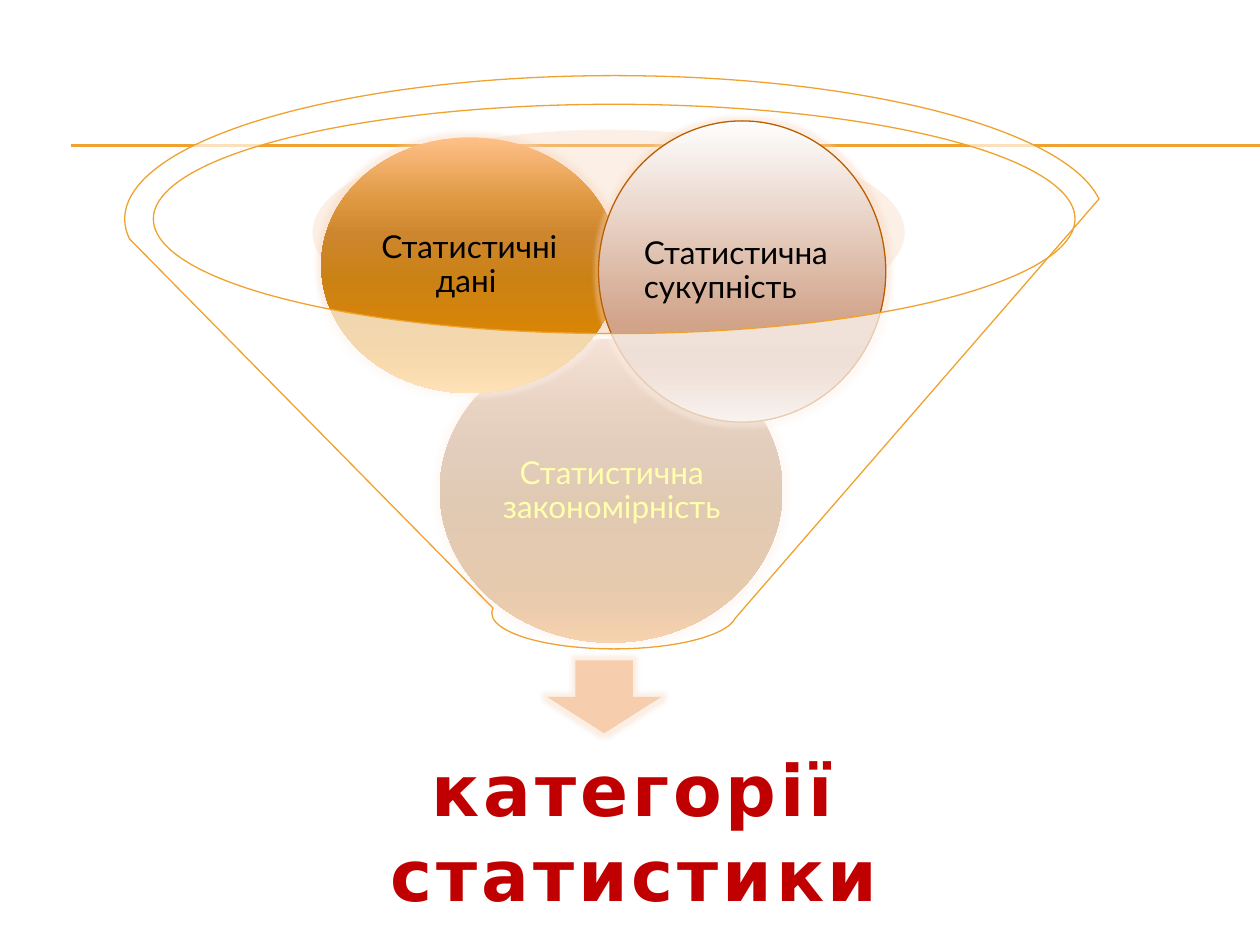
from lxml import etree
from pptx import Presentation
from pptx.dml.color import RGBColor
from pptx.enum.shapes import MSO_CONNECTOR, MSO_SHAPE
from pptx.enum.text import MSO_ANCHOR, PP_ALIGN
from pptx.oxml.ns import qn
from pptx.util import Inches, Pt

ELLIPSE, ARROW, FUNNEL = MSO_SHAPE.OVAL, MSO_SHAPE.DOWN_ARROW, MSO_SHAPE.FUNNEL
STRAIGHT = MSO_CONNECTOR.STRAIGHT
LEFT, CENTER = PP_ALIGN.LEFT, PP_ALIGN.CENTER
TOP, MIDDLE = MSO_ANCHOR.TOP, MSO_ANCHOR.MIDDLE

GOLD, PEACH, BLACK = "F0A22E", "F8D7BE", "000000"


def colour(value):
    return RGBColor.from_string(value)


def add_element(parent, tag, **attributes):
    element = etree.SubElement(parent, qn(tag))
    for name, value in attributes.items():
        element.set(name, str(value))
    return element


def add_colour(parent, value, opacity=100):
    element = add_element(parent, "a:srgbClr", val=value)
    if opacity < 100:
        add_element(element, "a:alpha", val=opacity * 1000)


class SlideBuilder:
    """Holds the slide style and draws each kind of element."""

    body_font = "Lato"
    title_font = "DejaVu Sans"
    line_width = Pt(0.75)

    def __init__(self, page):
        self.page = page

    def rule(self, left, right, top):
        line = self.page.shapes.add_connector(
            STRAIGHT, Inches(left), Inches(top), Inches(right), Inches(top))
        line.line.color.rgb = colour(GOLD)
        line.line.width = self.line_width
        add_element(line._element.spPr, "a:effectLst")

    def shape(self, kind, place, fill=None, opacity=100, stops=None,
              outline=None, glow=False):
        shape = self.page.shapes.add_shape(kind, *map(Inches, place))
        shape.shadow.inherit = False
        if stops:
            self.gradient(shape, stops)
        else:
            shape.fill.solid()
            shape.fill.fore_color.rgb = colour(fill)
            if opacity < 100:
                solid = shape._element.spPr.find(qn("a:solidFill"))
                add_element(solid[0], "a:alpha", val=opacity * 1000)
        if outline:
            shape.line.color.rgb = colour(outline)
            shape.line.width = self.line_width
        else:
            shape.line.fill.background()
        if glow:
            effects = shape._element.spPr.find(qn("a:effectLst"))
            halo = add_element(effects, "a:glow", rad=Pt(5))
            add_colour(halo, PEACH, 40)

    def gradient(self, shape, stops):
        shape.fill.gradient()
        fill = shape._element.spPr.find(qn("a:gradFill"))
        for child in list(fill):
            fill.remove(child)
        stop_list = add_element(fill, "a:gsLst")
        for position, value in stops:
            add_colour(add_element(stop_list, "a:gs", pos=position * 1000), value)
        add_element(fill, "a:lin", ang=90 * 60000, scaled=0)

    def text(self, place, spans, align, anchor, insets, wrap=True, spacing=1.0):
        box = self.page.shapes.add_textbox(*map(Inches, place))
        frame = box.text_frame
        side, end = map(Inches, insets)
        frame_format = {
            "margin_left": side, "margin_right": side,
            "margin_top": end, "margin_bottom": end,
            "vertical_anchor": anchor, "word_wrap": wrap,
        }
        for name, value in frame_format.items():
            setattr(frame, name, value)
        para = frame.paragraphs[0]
        para.alignment, para.line_spacing = align, spacing
        for index, (words, font_format, value) in enumerate(spans):
            if index and wrap is False:
                para.add_line_break()
            span = para.add_run()
            span.text = words
            for name, setting in font_format.items():
                setattr(span.font, name, setting)
            span.font.color.rgb = colour(value)
        return para

    def label(self, place, words, value, align=CENTER, tail=""):
        body = {"name": self.body_font, "size": Pt(18)}
        spans = [(words, body, value)]
        if tail:
            spans.append((tail, {**body, "size": Pt(14)}, value))
        self.text(place, spans, align, MIDDLE, (0.03, 0.03), spacing=0.9)

    def title(self, place, lines):
        heading = {"name": self.title_font, "size": Pt(40.5), "bold": True}
        spans = [(line, heading, "C00000") for line in lines]
        para = self.text(place, spans, CENTER, TOP, (0.07, 0.04), wrap=False)
        for span in para.runs:
            properties = span.font._element
            properties.set("spc", "220")
            outline = etree.Element(qn("a:ln"), w=str(Pt(0.9)))
            add_colour(add_element(outline, "a:solidFill"), "FEF8F4")
            properties.insert(0, outline)


def main():
    deck = Presentation()
    deck.slide_width, deck.slide_height = Inches(10), Inches(7.5)
    builder = SlideBuilder(deck.slides.add_slide(deck.slide_layouts[6]))

    # Double rule behind the funnel
    for top in (1.15, 1.16):
        builder.rule(0.56, 10, top)

    # Funnel mouth and outlet arrow
    builder.shape(ELLIPSE, (2.48, 1.03, 4.7, 1.63), PEACH, opacity=40)
    builder.shape(ARROW, (4.34, 5.24, 0.91, 0.58), "F6CEAD", glow=True)

    # Category circles with their labels
    positions = (0, 25, 38, 55, 80, 88, 100)
    brown = ("E4A582", "B5733E", "A6642F", "A35C14", "B15B05", "BF6000", "EA7505")
    orange = ("FFC089", "DE9840", "CD862E", "CB8215", "DC8502", "EA8C00", "FFA523")
    pale = ((0, "FEFEFE"), (68, "D1A389"), (81, "D0A084"), (86, "D4AA93"),
            (100, "ECDBD4"))

    builder.shape(ELLIPSE, (3.49, 2.69, 2.72, 2.41),
                  stops=zip(positions, brown), glow=True)
    builder.label((3.89, 3.05, 1.93, 1.7), "Статистична закономірність", "FFFF00")

    builder.shape(ELLIPSE, (2.55, 1.09, 2.36, 2.03),
                  stops=zip(positions, orange), glow=True)
    builder.label((2.89, 1.39, 1.67, 1.43), "Статистичні дані", BLACK, tail=" ")

    builder.shape(ELLIPSE, (4.75, 0.96, 2.28, 2.39), stops=pale,
                  outline="BB5E00", glow=True)
    builder.label((5.08, 1.31, 1.62, 1.69), "Статистична сукупність", BLACK,
                  align=LEFT)

    # Translucent funnel over the circles
    builder.shape(FUNNEL, (0.99, 0.6, 7.77, 4.55), "FFFFFF", opacity=68,
                  outline=GOLD)

    # Result of the funnel
    builder.title((1.3, 5.88, 7.47, 0.76), ("категорії", "статистики"))

    deck.save("out.pptx")


if __name__ == "__main__":
    main()
